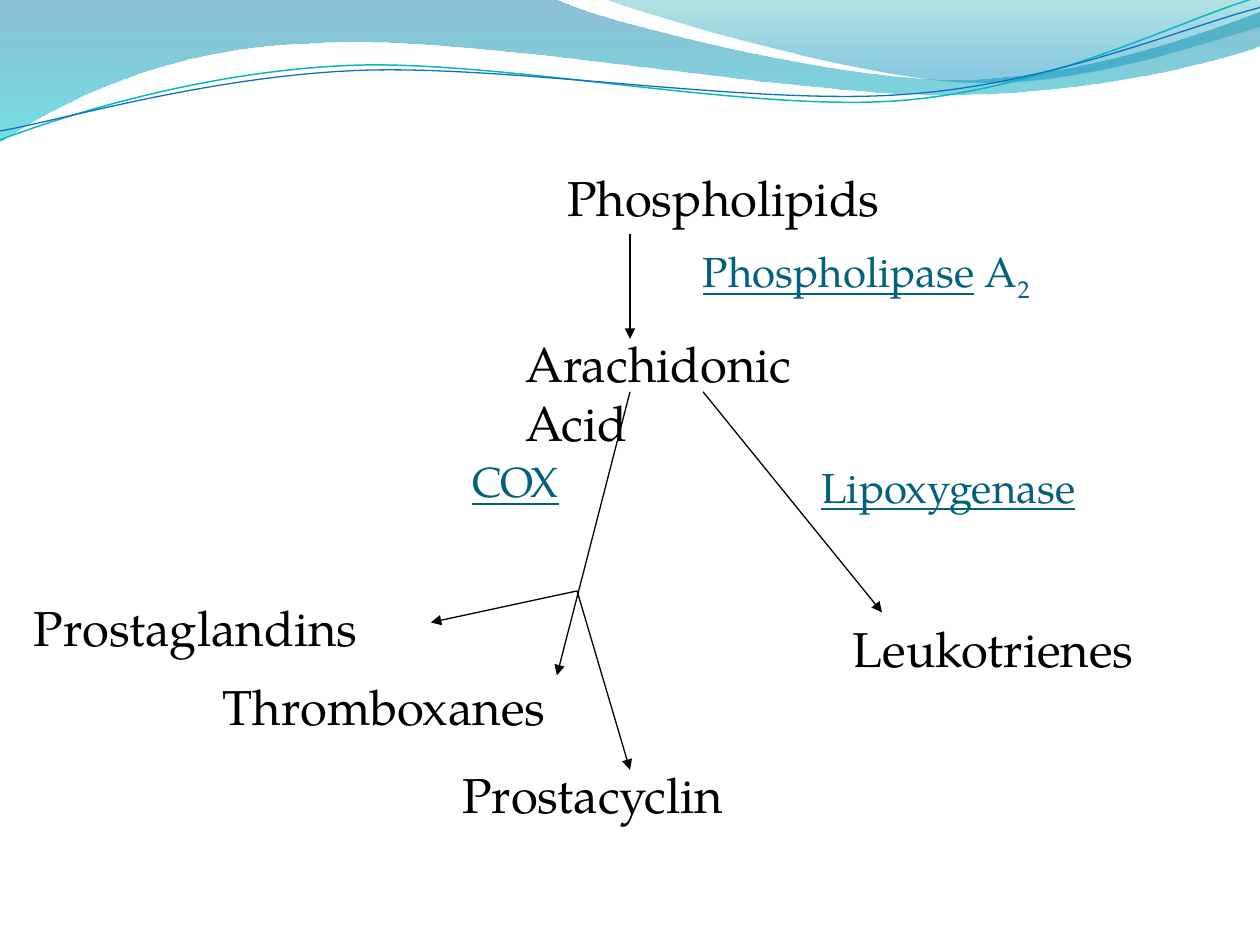
from dataclasses import dataclass

from lxml.etree import SubElement
from pptx import Presentation
from pptx.dml.color import RGBColor
from pptx.enum.shapes import MSO_CONNECTOR
from pptx.enum.text import PP_ALIGN, MSO_AUTO_SIZE
from pptx.oxml.ns import qn
from pptx.util import Inches, Pt

FONT = "TeX Gyre Pagella"
BLACK, TEAL = "000000", "04617B"

Point = tuple[float, float]


@dataclass
class Stop:
    position: float
    color: str
    opacity: int


@dataclass
class Wave:
    start: Point
    curves: list[tuple[Point, ...]]  # three points: Bezier; one point: straight edge
    stops: tuple[Stop, ...] = ()
    line: str = ""
    width: float = 0


@dataclass
class Label:
    text: str
    left: float
    top: float
    width: float
    align: PP_ALIGN = PP_ALIGN.LEFT


@dataclass
class Enzyme:
    name: str
    left: float
    top: float
    width: float
    suffix: str = ""
    subscript: str = ""


@dataclass
class Arrow:
    start: Point
    end: Point


WAVES = [
    Wave((0, 0), [
        ((4.4, -0.01),),
        ((4.76, 0.17), (6.64, 0.63), (7.58, 0.63)),
        ((8.53, 0.63), (9.58, 0.26), (10, 0.09)),
        ((10.01, 0.36),),
        ((9.83, 0.44), (8.7, 0.76), (7.46, 0.75)),
        ((6.22, 0.75), (3.82, 0.28), (2.57, 0.34)),
        ((1.29, 0.36), (0.46, 0.83), (-0.01, 1.13)),
    ], (Stop(0, "0074A1", 45), Stop(1, "00C6CF", 55))),
    Wave((4.79, -0.01), [
        ((5.09, 0.11), (6.82, 0.62), (7.69, 0.65)),
        ((8.56, 0.69), (9.61, 0.32), (10, 0.21)),
        ((10, 0),),
    ], (Stop(0, "00A1A9", 30), Stop(0.8, "008BBF", 45))),
    Wave((0, 1.11), [
        ((0.48, 0.93), (1.58, 0.57), (2.77, 0.52)),
        ((3.95, 0.47), (5.93, 0.89), (7.13, 0.8)),
        ((8.33, 0.71), (9.38, 0.15), (9.98, -0.02)),
    ], line="0AB8BF", width=0.85),
    Wave((0, 1.04), [
        ((0.47, 0.96), (1.64, 0.61), (2.83, 0.56)),
        ((4.03, 0.51), (5.97, 0.84), (7.17, 0.75)),
        ((8.36, 0.67), (9.41, 0.21), (10, 0.06)),
    ], line="0F6FC6", width=0.75),
]

LABELS = [
    Label("Phospholipids", 3.95, 1.28, 3.13, PP_ALIGN.RIGHT),
    Label("Arachidonic Acid", 4.07, 2.6, 3.1),
    Label("Prostaglandins", 0.17, 4.69, 2.98),
    Label("Thromboxanes", 1.67, 5.32, 3.16),
    Label("Prostacyclin", 3.57, 6.02, 2.3),
    Label("Leukotrienes", 6.67, 4.86, 2.67),
]

ENZYMES = [
    Enzyme("Phospholipase", 5.48, 1.9, 2.83, " A", "2"),
    Enzyme("COX", 3.65, 3.57, 0.92),
    Enzyme("Lipoxygenase", 6.42, 3.61, 2.26),
]

BRANCH = (4.58, 4.69)
ARROWS = [
    Arrow((5, 1.86), (5, 2.69)),
    Arrow((5, 3.11), (4.42, 5.36)),
    Arrow(BRANCH, (3.42, 4.94)),
    Arrow(BRANCH, (5, 6.11)),
    Arrow((5.58, 3.11), (7, 4.86)),
]


def rgb(color: str) -> RGBColor:
    return RGBColor.from_string(color)


def bend_segments(sp, curves: list[tuple[Point, ...]]) -> None:
    """Join each run of three straight segments into one Bezier segment."""
    segments = iter(list(sp.element.iter(qn("a:lnTo"))))
    for curve in curves:
        group = [next(segments) for _ in curve]
        if len(group) == 3:
            path = group[0].getparent()
            bezier = path.makeelement(qn("a:cubicBezTo"))
            group[0].addprevious(bezier)
            for segment in group:
                bezier.append(segment[0])
                path.remove(segment)


def draw_wave(s, wave: Wave) -> None:
    points = [wave.start, *(point for curve in wave.curves for point in curve)]
    emu = [(Inches(x), Inches(y)) for x, y in points]
    builder = s.shapes.build_freeform(*emu[0])
    builder.add_line_segments(emu[1:], close=bool(wave.stops))
    sp = builder.convert_to_shape()
    bend_segments(sp, wave.curves)
    sp.shadow.inherit = False
    if wave.stops:
        sp.line.fill.background()
        sp.fill.gradient()
        sp.fill.gradient_angle = 270
        for target, stop in zip(sp.fill.gradient_stops, wave.stops):
            target.position = stop.position
            target.color.rgb = rgb(stop.color)
        # Opacity of each gradient stop
        colors = sp.element.spPr.iter(qn("a:srgbClr"))
        for color, stop in zip(colors, wave.stops):
            SubElement(color, qn("a:alpha"), val=str(stop.opacity * 1000))
    else:
        sp.fill.background()
        sp.line.color.rgb = rgb(wave.line)
        sp.line.width = Pt(wave.width)


def add_box(s, left: float, top: float, width: float, height: float):
    sp = s.shapes.add_textbox(Inches(left), Inches(top), Inches(width), Inches(height))
    tf = sp.text_frame
    tf.word_wrap = True
    tf.auto_size = MSO_AUTO_SIZE.SHAPE_TO_FIT_TEXT
    return tf.paragraphs[0]


def add_run(p, text: str, size: float, color: str, underline: bool = False):
    r = p.add_run()
    r.text = text
    r.font.name = FONT
    r.font.size = Pt(size)
    r.font.color.rgb = rgb(color)
    r.font.underline = underline
    return r


def draw_label(s, label: Label) -> None:
    p = add_box(s, label.left, label.top, label.width, 0.57)
    p.alignment = label.align
    add_run(p, label.text, 28, BLACK)


def draw_enzyme(s, enzyme: Enzyme) -> None:
    p = add_box(s, enzyme.left, enzyme.top, enzyme.width, 0.5)
    add_run(p, enzyme.name, 24, TEAL, underline=True)
    if enzyme.suffix:
        add_run(p, enzyme.suffix, 24, TEAL)
    if enzyme.subscript:
        r = add_run(p, enzyme.subscript, 24, TEAL)
        r.font._element.set("baseline", "-25000")


def draw_arrow(s, arrow: Arrow) -> None:
    ends = [Inches(v) for v in (*arrow.start, *arrow.end)]
    line = s.shapes.add_connector(MSO_CONNECTOR.STRAIGHT, *ends)
    line.line.color.rgb = rgb(BLACK)
    line.line.width = Pt(0.75)
    SubElement(line.line._get_or_add_ln(), qn("a:tailEnd"), type="triangle")
    SubElement(line.element.spPr, qn("a:effectLst"))


def main() -> None:
    prs = Presentation()
    prs.slide_width, prs.slide_height = Inches(10), Inches(7.5)
    s = prs.slides.add_slide(prs.slide_layouts[6])

    # Header waves, then the pathway
    for draw, items in ((draw_wave, WAVES), (draw_label, LABELS),
                        (draw_enzyme, ENZYMES), (draw_arrow, ARROWS)):
        for item in items:
            draw(s, item)

    prs.save("out.pptx")


if __name__ == "__main__":
    main()
